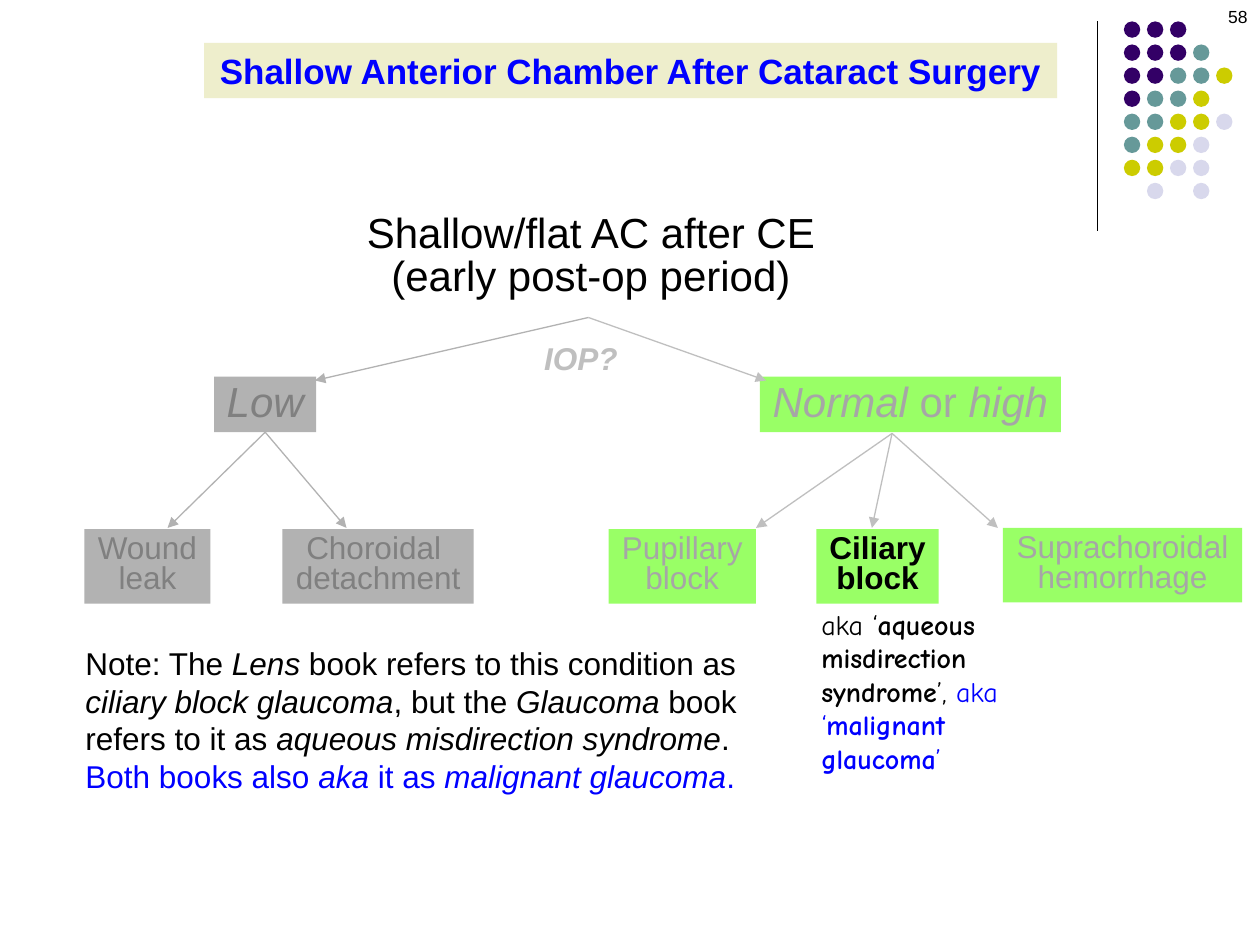
from pptx import Presentation
from pptx import util as u
from pptx.dml.color import RGBColor
from pptx.enum import shapes, text
from pptx.oxml.ns import qn
from lxml import etree

HUES = {
    "black": "000000", "blue": "0000FF", "cream": "EEEECC",
    "green": "99FF66", "gray": "B2B2B2", "pale": "BFBFBF",
    "dim": "808080", "mute": "A6A6A6",
    "P": "330066", "T": "669999", "Y": "CCCC00", "L": "D8D8EC",
}
DOTS = ["PPP", "PPPT", "PPTTY", "PTTY", "TTYYL", "TYYL", "YYLL", " L L"]
LEFT, MID = text.PP_ALIGN.LEFT, text.PP_ALIGN.CENTER


def rgb(name):
    return RGBColor.from_string(HUES[name])


def write(shape, paras, size, hue, font="Arial", align=LEFT, gap=None,
          wrap=False, grow=True):
    """Fill with paragraphs of (words, style, hue) runs; style holds b and i."""
    frame = shape.text_frame
    frame.word_wrap = wrap
    frame.vertical_anchor = text.MSO_ANCHOR.TOP
    if grow:
        frame.auto_size = text.MSO_AUTO_SIZE.SHAPE_TO_FIT_TEXT
    for n, runs in enumerate(paras):
        para = frame.add_paragraph() if n else frame.paragraphs[0]
        para.alignment = align
        if gap:
            para.line_spacing = gap
        for words, style, *own in runs:
            run = para.add_run()
            run.text = words
            run.font.name = font
            run.font.size = u.Pt(size)
            run.font.bold = "b" in style
            run.font.italic = "i" in style
            run.font.color.rgb = rgb(own[0] if own else hue)


def add_fill(slide, kind, box, hue):
    shape = slide.shapes.add_shape(kind, *map(u.Inches, box))
    shape.shadow.inherit = False
    shape.fill.solid()
    shape.fill.fore_color.rgb = rgb(hue)
    shape.line.fill.background()
    return shape


def add_box(slide, box, fill, paras, size, hue, gap=None):
    shape = add_fill(slide, shapes.MSO_SHAPE.RECTANGLE, box, fill)
    write(shape, paras, size, hue, align=MID, gap=gap)
    return shape


def add_text(slide, box, paras, size, hue, **opts):
    shape = slide.shapes.add_textbox(*map(u.Inches, box))
    write(shape, paras, size, hue, **opts)


def add_line(slide, start, end, hue, head=True):
    line = slide.shapes.add_connector(
        shapes.MSO_CONNECTOR.STRAIGHT, *map(u.Inches, start + end))
    line.line.color.rgb = rgb(hue)
    line.line.width = u.Pt(0.75)
    if head:
        etree.SubElement(line.line._get_or_add_ln(), qn("a:tailEnd"),
                         type="triangle")
    etree.SubElement(line._element.spPr, qn("a:effectLst"))
    return line


def add_dots(slide):
    step = 0.183
    for row, marks in enumerate(DOTS):
        for col, mark in enumerate(marks):
            if mark != " ":
                spot = (8.92 + col * step, 0.17 + row * step, 0.13, 0.13)
                add_fill(slide, shapes.MSO_SHAPE.OVAL, spot, mark)


def add_tree(slide):
    add_text(slide, (2.8, 1.65, 3.78, 0.78),
             [[("Shallow/flat AC after CE", "")],
              [("(early post-op period)", "")]],
             24, "black", align=MID, gap=0.85)
    add_box(slide, (6.03, 2.99, 2.39, 0.44), "green",
            [[("Normal", "i"), (" or ", ""), ("high", "i")]],
            24, "mute", 0.85)
    low = add_box(slide, (1.7, 2.99, 0.81, 0.44), "gray",
                  [[("Low", "i")]], 24, "dim", 0.85)

    leaves = [
        (0.67, 4.2, 1, "gray", "dim", "", "Wound", "leak"),
        (2.24, 4.2, 1.52, "gray", "dim", "", "Choroidal ", "detachment"),
        (4.83, 4.2, 1.17, "green", "mute", "", "Pupillary", "block"),
        (6.48, 4.2, 0.97, "green", "black", "b", "Ciliary", "block"),
        (7.96, 4.19, 1.9, "green", "mute", "", "Suprachoroidal", "hemorrhage"),
    ]
    for x, y, wide, fill, hue, style, *words in leaves:
        add_box(slide, (x, y, wide, 0.59), fill,
                [[(word, style)] for word in words], 18, hue, 0.8)

    root, high = (4.67, 2.52), (7.08, 3.44)
    add_line(slide, root, (2.5, 3.02), "gray")
    add_line(slide, root, (6.08, 3.02), "pale")
    for x in (1.33, 2.75):
        add_line(slide, (2.08, 3.44), (x, 4.19), "gray").begin_connect(low, 2)
    for x in (6, 6.92, 7.92):
        add_line(slide, high, (x, 4.19), "pale")
    add_text(slide, (4.22, 2.64, 0.78, 0.4), [[("IOP?", "bi")]], 18, "pale")


def add_notes(slide):
    add_text(slide, (0.58, 5.06, 5.42, 1.31), [
        [("Note: The ", ""), ("Lens", "i"),
         (" book refers to this condition as ", ""),
         ("ciliary block glaucoma", "i"), (", but the ", ""),
         ("Glaucoma", "i"), (" book refers to it as ", ""),
         ("aqueous misdirection syndrome", "i"), (".", "")],
        [("Both books also ", "", "blue"), ("aka", "i", "blue"),
         (" it as ", "", "blue"), ("malignant glaucoma", "i", "blue"),
         (".", "", "blue")],
    ], 18, "black", wrap=True)
    add_text(slide, (6.42, 4.77, 1.75, 1.99), [
        [("aka ‘", ""), ("aqueous misdirection syndrome", "b"), ("’, ", ""),
         ("aka ‘", "", "blue"), ("malignant glaucoma", "b", "blue"),
         ("’", "", "blue")],
    ], 16, "black", font="Comic Neue", wrap=True)


def main():
    deck = Presentation()
    deck.slide_width, deck.slide_height = u.Inches(10), u.Inches(7.5)
    slide = deck.slides.add_slide(deck.slide_layouts[6])
    add_line(slide, (8.71, 0.17), (8.71, 1.83), "black", head=False)
    add_dots(slide)
    add_text(slide, (7.67, 0, 2.33, 0.5), [[("58", "")]], 10, "black",
             align=text.PP_ALIGN.RIGHT, wrap=True, grow=False)
    add_box(slide, (1.62, 0.34, 6.77, 0.44), "cream",
            [[("Shallow Anterior Chamber After Cataract Surgery", "b")]],
            20, "blue")
    add_tree(slide)
    add_notes(slide)
    deck.save("out.pptx")


if __name__ == "__main__":
    main()
